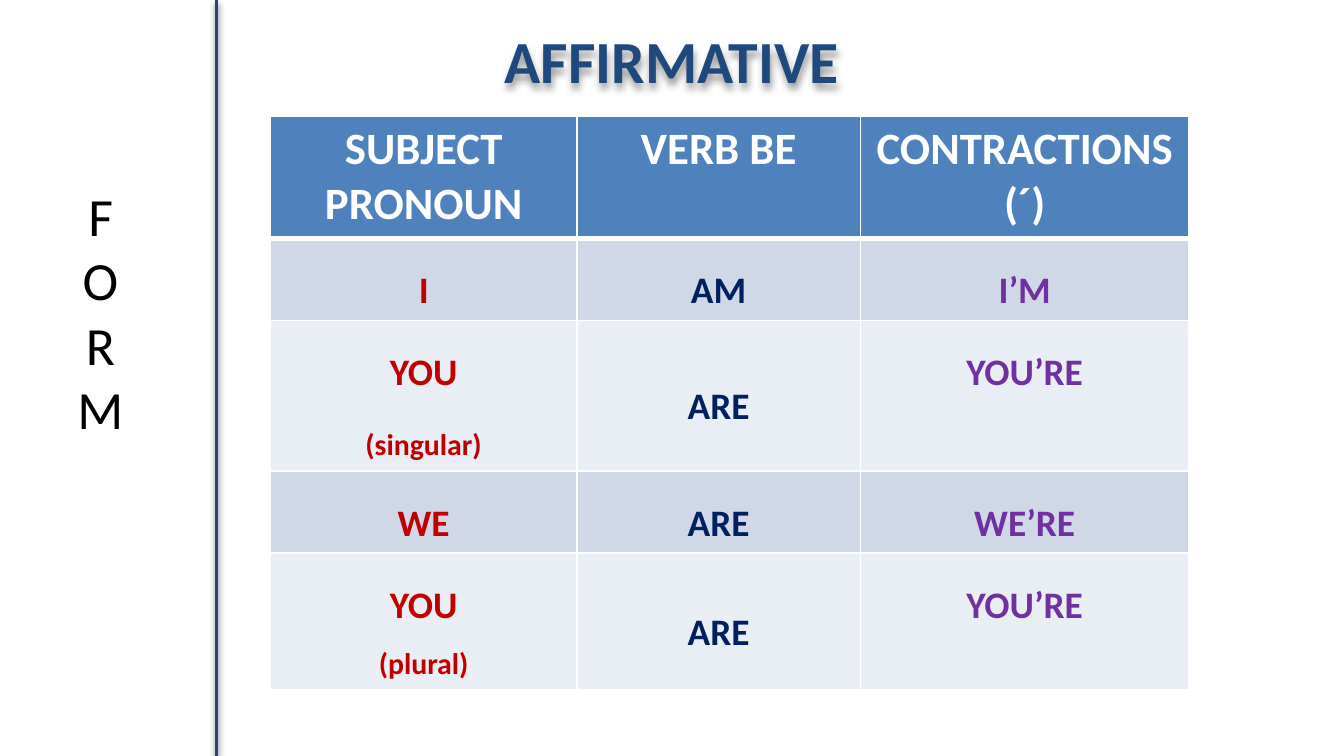
from lxml.etree import SubElement
from pptx import Presentation
from pptx.dml.color import RGBColor
from pptx.enum.shapes import MSO_CONNECTOR
from pptx.enum.text import MSO_ANCHOR, PP_ALIGN
from pptx.oxml.ns import qn
from pptx.util import Pt

WIDTH, HEIGHT = 720, 405
NAVY, HEADER, WHITE = "1F497D", "4F81BD", "FFFFFF"
BANDS = ["D0D8E8", "E9EDF4"]
COLUMN_COLORS = ["C00000", "002060", "7030A0"]
COLUMN_WIDTHS = [164, 152, 176]
ROW_HEIGHTS = [65.5, 44, 80.5, 44, 73]
HEADINGS = ["SUBJECT PRONOUN", "VERB BE", "CONTRACTIONS (´)"]
# Each cell lists its paragraphs
CONJUGATION = [
    [["I"], ["AM"], ["I’M"]],
    [["YOU", "(singular)"], ["ARE"], ["YOU’RE"]],
    [["WE"], ["ARE"], ["WE’RE"]],
    [["YOU", "(plural)"], ["ARE"], ["YOU’RE"]],
]


def color(hex_value):
    return RGBColor.from_string(hex_value)


def write(paragraph, text, size, hex_value, bold=True, spacing=None):
    run = paragraph.add_run()
    run.text = text
    paragraph.alignment = PP_ALIGN.CENTER
    paragraph.line_spacing = spacing
    run.font.color.rgb = color(hex_value)
    formats = {"name": "Calibri", "size": Pt(size), "bold": bold}
    for attribute, value in formats.items():
        setattr(run.font, attribute, value)


def add_shadow(shape, blur, distance, opacity):
    effects = SubElement(shape.element.spPr, qn("a:effectLst"))
    shadow = SubElement(effects, qn("a:outerShdw"), blurRad=str(Pt(blur)),
                        dist=str(Pt(distance)), dir="5400000", rotWithShape="0")
    black = SubElement(shadow, qn("a:srgbClr"), val="000000")
    SubElement(black, qn("a:alpha"), val=str(opacity * 1000))


def add_label(slide, box, text, size, hex_value, bold):
    label = slide.shapes.add_textbox(*map(Pt, box))
    frame = label.text_frame
    for attribute, value in {"word_wrap": True,
                             "vertical_anchor": MSO_ANCHOR.MIDDLE}.items():
        setattr(frame, attribute, value)
    write(frame.paragraphs[0], text, size, hex_value, bold)
    return label


def add_sidebar(slide, left, top, width, height):
    # The narrow box stacks the letters one per line
    add_label(slide, (left + 31, top + 111.5, 45.5, 111), "FORM", 28.8, "000000", False)
    # Divider on the right edge
    edge = left + width
    divider = slide.shapes.add_connector(
        MSO_CONNECTOR.STRAIGHT, Pt(edge), Pt(top), Pt(edge), Pt(top + height))
    divider.line.color.rgb = color(NAVY)
    divider.line.width = Pt(2)
    add_shadow(divider, 3.1, 1.6, 38)


def add_title(slide, left, top, width, height):
    title = add_label(slide, (left, top, width, height), "AFFIRMATIVE", 32, NAVY, True)
    add_shadow(title, 4, 3, 40)


def style_cell(cell, fill, bottom_width=1):
    properties = cell._tc.get_or_add_tcPr()
    for side in "LRTB":
        border = SubElement(properties, qn(f"a:ln{side}"),
                            w=str(Pt(bottom_width if side == "B" else 1)))
        SubElement(SubElement(border, qn("a:solidFill")), qn("a:srgbClr"), val=WHITE)
    cell.fill.solid()
    cell.fill.fore_color.rgb = color(fill)


def add_conjugation_table(slide, left, top, width, height):
    table = slide.shapes.add_table(
        len(ROW_HEIGHTS), len(COLUMN_WIDTHS),
        Pt(left), Pt(top), Pt(width), Pt(height)).table
    for column, column_width in zip(table.columns, COLUMN_WIDTHS):
        column.width = Pt(column_width)
    for row, row_height in zip(table.rows, ROW_HEIGHTS):
        row.height = Pt(row_height)

    # Header row
    for column, heading in enumerate(HEADINGS):
        cell = table.cell(0, column)
        style_cell(cell, HEADER, 3)
        write(cell.text_frame.paragraphs[0], heading, 24, WHITE)

    # Banded body rows
    for row, entries in enumerate(CONJUGATION, 1):
        for column, (word, *notes) in enumerate(entries):
            cell = table.cell(row, column)
            style_cell(cell, BANDS[(row - 1) % 2])
            if column == 1:
                cell.vertical_anchor = MSO_ANCHOR.MIDDLE
            frame, ink = cell.text_frame, COLUMN_COLORS[column]
            write(frame.paragraphs[0], word, 20, ink, spacing=1.5)
            for note in notes:
                paragraph = frame.add_paragraph()
                write(paragraph, note, 16, ink, spacing=1.5)
                if note == "(singular)":
                    paragraph.space_before = Pt(7)


def main():
    presentation = Presentation()
    presentation.slide_width, presentation.slide_height = Pt(WIDTH), Pt(HEIGHT)
    slide = presentation.slides.add_slide(presentation.slide_layouts[6])
    add_conjugation_table(slide, 145, 62, sum(COLUMN_WIDTHS), sum(ROW_HEIGHTS))
    add_sidebar(slide, 0, 0, 116, HEIGHT)
    add_title(slide, 0, 1.5, WIDTH, 60.5)
    presentation.save("out.pptx")


if __name__ == "__main__":
    main()
